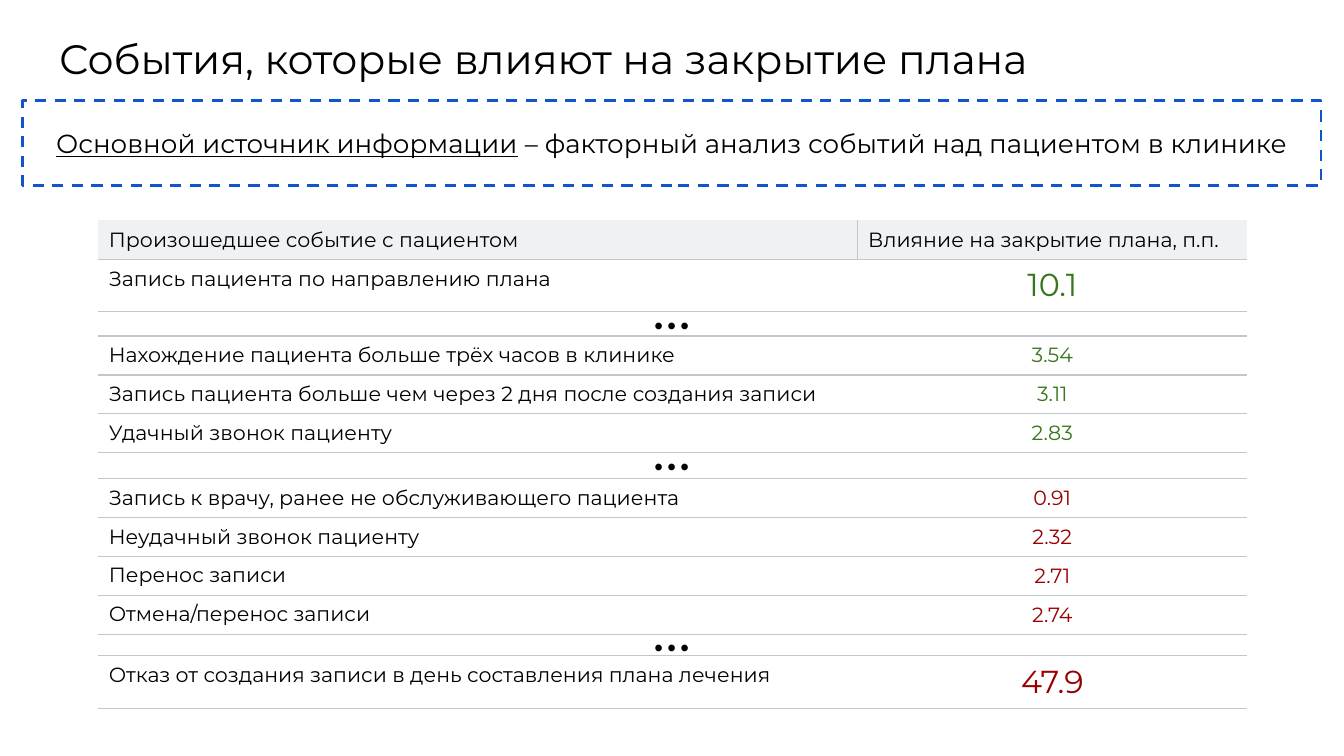
from lxml import etree
from pptx import Presentation
from pptx import util as u
from pptx.dml.color import RGBColor
from pptx.enum import dml, shapes, text
from pptx.oxml import ns

WIDTH = 10
HEIGHT = WIDTH * 9 / 16
FONT = "Montserrat"
BLACK, GREEN, RED = "000000", "38761D", "990000"
RULE, HEADER, FRAME = "C1C7CD", "F0F1F3", "1155CC"
TABLE_LEFT, COLUMNS = 0.73, (5.65, 2.9)
ROW, TALL_ROW = 0.29, 0.39
BODY, KEY = 11, 17
MIDDLE, TOP = text.MSO_ANCHOR.MIDDLE, text.MSO_ANCHOR.TOP
CENTER, LEFT = text.PP_ALIGN.CENTER, text.PP_ALIGN.LEFT

TOP_EVENT = [
    ("Произошедшее событие с пациентом", "Влияние на закрытие плана, п.п."),
    ("Запись пациента по направлению плана", "10.1"),
]
GOOD_EVENTS = [
    ("Нахождение пациента больше трёх часов в клинике", "3.54"),
    ("Запись пациента больше чем через 2 дня после создания записи", "3.11"),
    ("Удачный звонок пациенту", "2.83"),
]
BAD_EVENTS = [
    ("Запись к врачу, ранее не обслуживающего пациента", "0.91"),
    ("Неудачный звонок пациенту", "2.32"),
    ("Перенос записи", "2.71"),
    ("Отмена/перенос записи", "2.74"),
]
WORST_EVENT = [("Отказ от создания записи в день составления плана лечения", "47.9")]


def color(value):
    """Turn a hex string into a colour."""
    return RGBColor.from_string(value)


def box(left, top, width, height):
    """Turn inches into lengths."""
    return [u.Inches(side) for side in (left, top, width, height)]


def add_run(paragraph, words, size, ink=BLACK, underline=False):
    """Add one formatted run."""
    run = paragraph.add_run()
    run.text = words
    run.font.name, run.font.size = FONT, u.Pt(size)
    run.font.color.rgb = color(ink)
    run.font.bold, run.font.underline = False, underline


def prepare(frame, align, anchor):
    """Set the insets and alignment of a frame and give its paragraph."""
    frame.word_wrap, frame.auto_size = True, text.MSO_AUTO_SIZE.NONE
    frame.margin_left = frame.margin_right = u.Inches(0.1)
    frame.margin_top = frame.margin_bottom = u.Inches(0.1)
    frame.vertical_anchor = anchor
    paragraph = frame.paragraphs[0]
    paragraph.alignment = align
    return paragraph


def add_title(slide, words):
    """Fill and place the title placeholder."""
    title = slide.shapes.title
    title.left, title.top, title.width, title.height = box(0.34, 0.15, WIDTH - 0.68, 0.63)
    add_run(prepare(title.text_frame, LEFT, TOP), words, 22)


def add_source(slide, term, explanation):
    """Add the dashed frame naming the source of information."""
    source = slide.shapes.add_shape(
        shapes.MSO_SHAPE.RECTANGLE, *box(0.17, 0.75, WIDTH - 0.34, 0.63))
    source.shadow.inherit = False
    source.fill.background()
    source.line.color.rgb, source.line.width = color(FRAME), u.Pt(1.5)
    source.line.dash_style = dml.MSO_LINE.DASH
    paragraph = prepare(source.text_frame, CENTER, MIDDLE)
    add_run(paragraph, term, 14, underline=True)
    add_run(paragraph, explanation, 14)


def add_gap(slide, top, height):
    """Add the dots that stand for skipped events."""
    width = 2.34
    dots = slide.shapes.add_textbox(*box((WIDTH - width) / 2, top, width, height))
    add_run(prepare(dots.text_frame, CENTER, MIDDLE), "...", 33)


def set_borders(cell, ruled):
    """Rule the named sides of a cell and clear the others."""
    properties = cell._tc.get_or_add_tcPr()
    for side in "LRTB":
        line = etree.SubElement(properties, ns.qn(f"a:ln{side}"), w=str(u.Pt(0.75)))
        if side in ruled:
            fill = etree.SubElement(line, ns.qn("a:solidFill"))
            etree.SubElement(fill, ns.qn("a:srgbClr"), val=RULE)
        else:
            etree.SubElement(line, ns.qn("a:noFill"))


def fill_cell(cell, words, size, ink, ruled, header, centered):
    """Write, rule and fill one cell."""
    set_borders(cell, ruled)
    if header:
        cell.fill.solid()
        cell.fill.fore_color.rgb = color(HEADER)
    else:
        cell.fill.background()
    cell.margin_left = cell.margin_right = u.Inches(0.08)
    cell.margin_top = cell.margin_bottom = u.Inches(0.05)
    cell.vertical_anchor = MIDDLE if centered else TOP
    paragraph = cell.text_frame.paragraphs[0]
    paragraph.alignment = CENTER if centered else LEFT
    add_run(paragraph, words, size, ink)


def add_events(slide, top, events, ink, size=BODY, has_header=False):
    """Add a table of events and their influence."""
    heights = [TALL_ROW if size == KEY else ROW] * len(events)
    if has_header:
        heights[0] = ROW
    table = slide.shapes.add_table(
        len(events), 2, *box(TABLE_LEFT, top, sum(COLUMNS), sum(heights))).table
    table.first_row = table.horz_banding = False
    for column, width in zip(table.columns, COLUMNS):
        column.width = u.Inches(width)
    for index, (event, influence) in enumerate(events):
        header = has_header and index == 0
        table.rows[index].height = u.Inches(heights[index])
        sides = "B" if header else "TB"
        fill_cell(table.cell(index, 0), event, BODY, BLACK,
                  sides + "R" * header, header, False)
        fill_cell(table.cell(index, 1), influence, BODY if header else size,
                  BLACK if header else ink, sides + "L" * header, header, not header)


def main():
    """Build the slide."""
    deck = Presentation()
    deck.slide_width, deck.slide_height = u.Inches(WIDTH), u.Inches(HEIGHT)
    slide = deck.slides.add_slide(deck.slide_layouts[5])
    add_title(slide, "События, которые влияют на закрытие плана")
    add_events(slide, 1.64, TOP_EVENT, GREEN, KEY, has_header=True)
    add_events(slide, 4.88, WORST_EVENT, RED, KEY)
    add_gap(slide, 4.47, 0.39)
    add_events(slide, 2.5, GOOD_EVENTS, GREEN)
    add_events(slide, 3.56, BAD_EVENTS, RED)
    for top in (3.14, 2.09):
        add_gap(slide, top, 0.35)
    add_source(slide, "Основной источник информации",
               " – факторный анализ событий над пациентом в клинике")
    deck.save("out.pptx")


if __name__ == "__main__":
    main()
